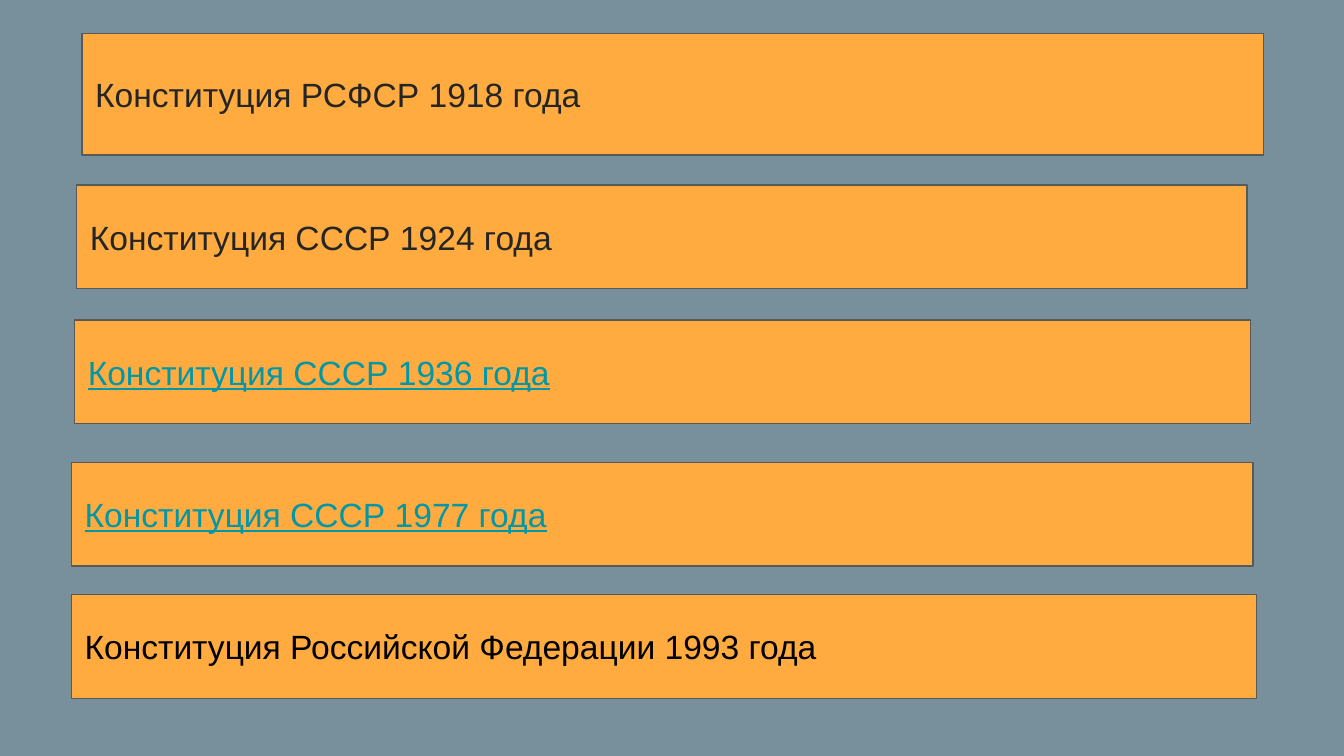
from pptx import Presentation
from pptx.dml.color import RGBColor
from pptx.enum.shapes import MSO_SHAPE
from pptx.enum.text import MSO_ANCHOR, PP_ALIGN
from pptx.util import Cm, Pt

RECT = MSO_SHAPE.RECTANGLE
MIDDLE = MSO_ANCHOR.MIDDLE
LEFT = PP_ALIGN.LEFT

COLORS = {
    "background": "78909C",
    "bar": "FFAB40",
    "border": "595959",
    "dark": "252525",
    "link": "0097A7",
    "black": "000000",
}
BAR_HEIGHT = 1.96

# text, left, top, width, height (cm), text format
CONSTITUTIONS = [
    ("Конституция РСФСР 1918 года", 1.55, 0.64, 22.33, 2.29, {}),
    ("Конституция СССР 1924 года", 1.45, 3.5, 22.12, BAR_HEIGHT, {}),
    ("Конституция СССР 1936 года", 1.41, 6.05, 22.23, BAR_HEIGHT,
     {"color": "link", "underline": True}),
    ("Конституция СССР 1977 года", 1.35, 8.74, 22.33, BAR_HEIGHT,
     {"color": "link", "underline": True}),
    ("Конституция Российской Федерации 1993 года", 1.35, 11.24, 22.4, BAR_HEIGHT,
     {"color": "black"}),
]


def rgb(name):
    return RGBColor.from_string(COLORS[name])


def write_text(tf, text, *, color="dark", size=18, font="Arial", underline=None):
    p = tf.paragraphs[0]
    p.alignment = LEFT
    r = p.add_run()
    r.text = text
    r.font.name = font
    r.font.size = Pt(size)
    r.font.underline = underline
    r.font.color.rgb = rgb(color)


class SlideBuilder:
    """Holds the style and the current slide."""

    def __init__(self, s, inset=0.25, line_width=0.75):
        self.s = s
        self.inset = Cm(inset)
        self.line_width = Pt(line_width)

    def background(self, color):
        fill = self.s.background.fill
        fill.solid()
        fill.fore_color.rgb = rgb(color)

    def bar(self, text, left, top, width, height, **text_format):
        sp = self.s.shapes.add_shape(RECT, Cm(left), Cm(top), Cm(width), Cm(height))
        sp.shadow.inherit = False
        sp.fill.solid()
        sp.fill.fore_color.rgb = rgb("bar")
        sp.line.color.rgb = rgb("border")
        sp.line.width = self.line_width
        tf = sp.text_frame
        tf.word_wrap = True
        tf.vertical_anchor = MIDDLE
        tf.margin_left = tf.margin_right = self.inset
        tf.margin_top = tf.margin_bottom = self.inset
        write_text(tf, text, **text_format)


def main():
    prs = Presentation()
    prs.slide_width, prs.slide_height = Cm(25.4), Cm(14.29)
    builder = SlideBuilder(prs.slides.add_slide(prs.slide_layouts[6]))
    builder.background("background")

    # One bar per constitution, in order of year
    for text, left, top, width, height, text_format in CONSTITUTIONS:
        builder.bar(text, left, top, width, height, **text_format)

    prs.save("out.pptx")


if __name__ == "__main__":
    main()
